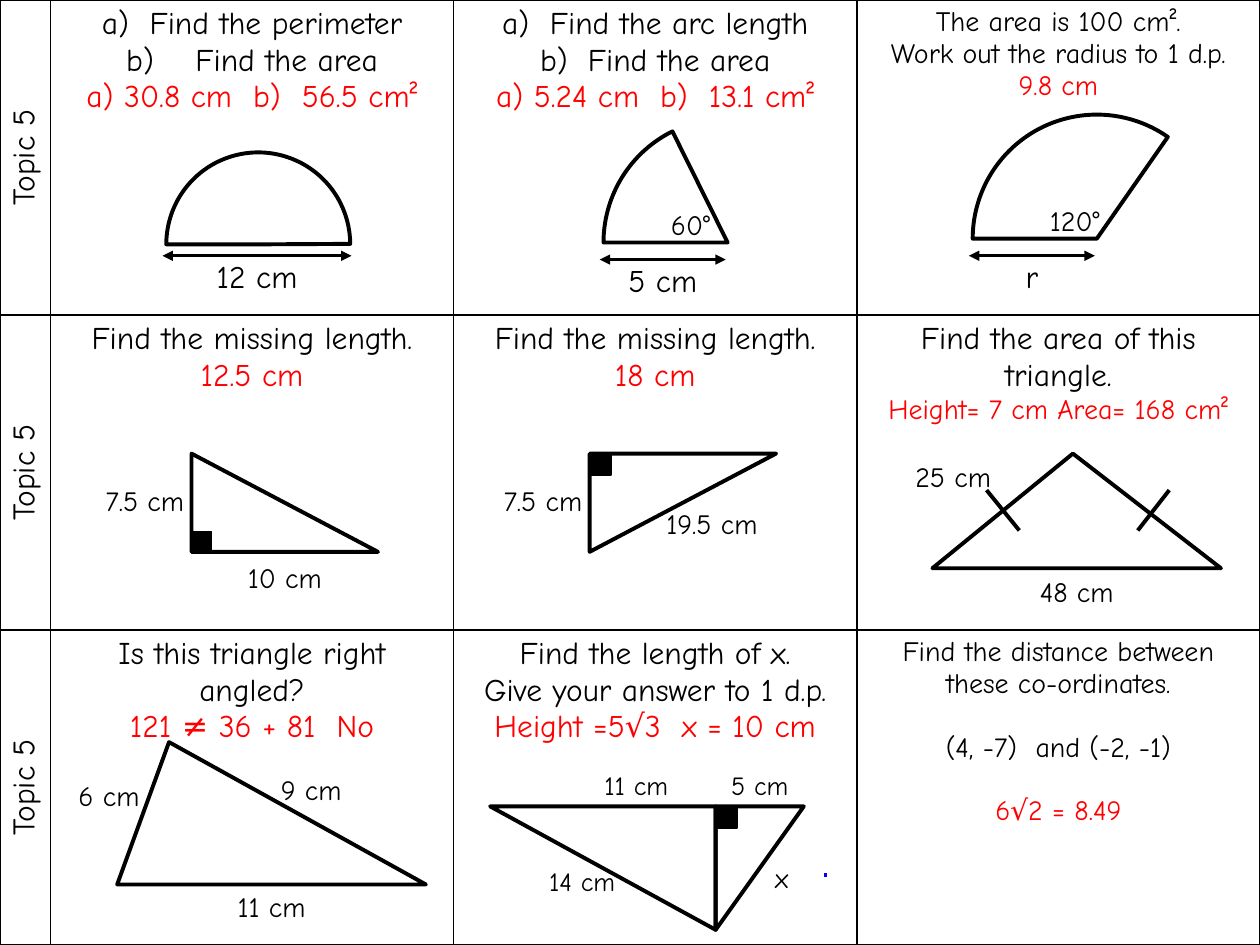
from lxml.etree import SubElement
from pptx import Presentation
from pptx.dml.color import RGBColor
from pptx.enum.shapes import MSO_CONNECTOR, MSO_SHAPE
from pptx.enum.text import MSO_ANCHOR, MSO_AUTO_SIZE, PP_ALIGN
from pptx.oxml.ns import qn
from pptx.util import Inches, Pt

BLACK = RGBColor(0x00, 0x00, 0x00)
WHITE = RGBColor(0xFF, 0xFF, 0xFF)
RED = RGBColor(0xFF, 0x00, 0x00)
BLUE = RGBColor(0x00, 0x00, 0xFF)
FONT = "Comic Neue"

TOPIC_WIDTH, QUESTION_WIDTH, ROW_HEIGHT = 0.4, 3.2, 2.5
LABEL_HEIGHTS = {15: 0.35, 16: 0.37, 18: 0.4}
HALF_TURN = 108  # 180 degrees in pie adjustment units

# Each question: its lines, its answer, question size, answer size
QUESTIONS = [
    [(["Find the perimeter", "Find the area"], "a) 30.8 cm  b)  56.5 cm²", 18, 18),
     (["Find the arc length", "Find the area"], "a) 5.24 cm  b)  13.1 cm²", 18, 18),
     (["The area is 100 cm².", "Work out the radius to 1 d.p."], "9.8 cm", 16, 16)],
    [(["Find the missing length."], "12.5 cm", 18, 18),
     (["Find the missing length."], "18 cm", 18, 18),
     (["Find the area of this triangle."], "Height= 7 cm Area= 168 cm²", 18, 16)],
    [(["Is this triangle right angled?"], "121 ≠ 36 + 81  No", 18, 18),
     (["Find the length of x.", "Give your answer to 1 d.p."],
      "Height =5√3  x = 10 cm", 18, 18),
     (["Find the distance between these co-ordinates.", "(4, -7)  and (-2, -1)"],
      "6√2 = 8.49", 16, 16)],
]
# Hanging indents of the lettered parts, by row and column
LETTERED = {(0, 0): [0.38, 0.55], (0, 1): [0.38, 0.38]}
SPACED = (2, 2)


def write(paragraph, text, size, color=BLACK):
    paragraph.alignment = PP_ALIGN.CENTER
    run = paragraph.add_run()
    run.text = text
    run.font.name, run.font.size = FONT, Pt(size)
    run.font.color.rgb = color


def add_letter(paragraph, indent):
    properties = paragraph._p.get_or_add_pPr()
    properties.set("marL", str(Inches(indent)))
    properties.set("indent", str(-Inches(indent)))
    SubElement(properties, qn("a:buFont"), typeface="+mj-lt")
    SubElement(properties, qn("a:buAutoNum"), type="alphaLcParenR")


def rule_cell(cell):
    properties = cell._tc.get_or_add_tcPr()
    for side in ("lnL", "lnR", "lnT", "lnB"):
        border = SubElement(properties, qn(f"a:{side}"), w=str(Pt(1)))
        fill = SubElement(border, qn("a:solidFill"))
        SubElement(fill, qn("a:srgbClr"), val=str(BLACK))
    cell.fill.background()


def fill_question(cell, question, indents, spaced):
    lines, answer, size, answer_size = question
    texts = [(line, size, BLACK) for line in lines] + [(answer, answer_size, RED)]
    for i, text in enumerate(texts):
        paragraphs = cell.text_frame
        paragraph = paragraphs.add_paragraph() if i else paragraphs.paragraphs[0]
        if i < len(indents):
            add_letter(paragraph, indents[i])
        if spaced and i:
            paragraph.space_before = Pt(18)
        write(paragraph, *text)


def question_grid(slide, left, top):
    width = TOPIC_WIDTH + 3 * QUESTION_WIDTH
    grid = slide.shapes.add_table(3, 4, Inches(left), Inches(top), Inches(width),
                                  Inches(3 * ROW_HEIGHT)).table
    grid.first_row = grid.horz_banding = False
    for c, column in enumerate(grid.columns):
        column.width = Inches(QUESTION_WIDTH if c else TOPIC_WIDTH)
    for r, questions in enumerate(QUESTIONS):
        grid.rows[r].height = Inches(ROW_HEIGHT)
        topic = grid.cell(r, 0)
        write(topic.text_frame.paragraphs[0], "Topic 5", 18)
        topic.vertical_anchor = MSO_ANCHOR.MIDDLE
        topic._tc.get_or_add_tcPr().set("vert", "vert270")
        rule_cell(topic)
        for c, question in enumerate(questions):
            cell = grid.cell(r, c + 1)
            fill_question(cell, question, LETTERED.get((r, c), []), (r, c) == SPACED)
            rule_cell(cell)


class Figure:
    """Grouped drawing, placed relative to its question cell."""

    def __init__(self, slide, row, column):
        self.shapes = slide.shapes.add_group_shape().shapes
        self.left = TOPIC_WIDTH + column * QUESTION_WIDTH
        self.top = row * ROW_HEIGHT

    def at(self, x, y):
        return Inches(self.left + x), Inches(self.top + y)

    def outline(self, kind, x, y, width, height, adjust=(), fill=None, flip="", weight=2.25):
        shape = self.shapes.add_shape(kind, *self.at(x, y), Inches(width), Inches(height))
        shape.shadow.inherit = False
        for i, value in enumerate(adjust):
            shape.adjustments[i] = value
        if fill is None:
            shape.fill.background()
        else:
            shape.fill.solid()
            shape.fill.fore_color.rgb = fill
        shape.line.color.rgb, shape.line.width = BLACK, Pt(weight)
        for axis in flip:
            shape._element.spPr.find(qn("a:xfrm")).set(f"flip{axis}", "1")

    def right_angle(self, x, y, width=0.16):
        self.outline(MSO_SHAPE.RECTANGLE, x, y, width, 0.16, fill=BLACK, weight=1)

    def label(self, text, x, y, width, size=16):
        box = self.shapes.add_textbox(*self.at(x, y), Inches(width),
                                      Inches(LABEL_HEIGHTS[size]))
        box.text_frame.word_wrap = True
        box.text_frame.auto_size = MSO_AUTO_SIZE.SHAPE_TO_FIT_TEXT
        write(box.text_frame.paragraphs[0], text, size)

    def stroke(self, start, end, weight=2.25, arrows=False):
        line = self.shapes.add_connector(MSO_CONNECTOR.STRAIGHT, *self.at(*start), *self.at(*end))
        line.line.color.rgb, line.line.width = BLACK, Pt(weight)
        if arrows:
            for tip in ("headEnd", "tailEnd"):
                SubElement(line.line._get_or_add_ln(), qn(f"a:{tip}"), type="triangle")
        SubElement(line._element.spPr, qn("a:effectLst"))


def sector(figure, x, y, size, end, measure, length, arrow_y, angle=None, angle_x=0):
    figure.outline(MSO_SHAPE.PIE, x, y, size, size, (HALF_TURN, end))
    start = x - 0.03
    figure.stroke((start, arrow_y), (start + length, arrow_y), 1.5, arrows=True)
    figure.label(measure, start, arrow_y - 0.04, length, 18)
    if angle:
        figure.label(angle, x + angle_x, y + 0.66, 1)


def right_triangle(figure, x, y, long_side, label_dx, label_dy, corner, flip=""):
    figure.outline(MSO_SHAPE.RIGHT_TRIANGLE, x, y, 1.48, 0.78, flip=flip)
    figure.label(long_side, x + label_dx, y + label_dy, 1.48)
    figure.label("7.5 cm", x - 1.29, y + 0.19, 1.84)
    figure.right_angle(x + corner[0], y + corner[1])


def isosceles_triangle(figure, x, y):
    figure.outline(MSO_SHAPE.ISOSCELES_TRIANGLE, x, y, 2.29, 0.91, (0.487,), WHITE)
    figure.label("48 cm", x, y + 0.91, 2.29)
    figure.label("25 cm", x - 0.36, y, 1.05)
    for top_dx, bottom_dx in ((0.43, 0.69), (1.88, 1.63)):  # equal-side ticks
        figure.stroke((x + top_dx, y + 0.29), (x + bottom_dx, y + 0.61))


def scalene_triangle(figure, x, y):
    figure.outline(MSO_SHAPE.ISOSCELES_TRIANGLE, x, y, 2.45, 1.13, (0.168,), WHITE)
    figure.label("11 cm", x, y + 1.12, 2.45)
    figure.label("6 cm", x - 0.5, y + 0.24, 0.87)
    figure.label("9 cm", x + 0.8, y + 0.19, 1.48)


def joined_triangles(figure, x, y):
    figure.outline(MSO_SHAPE.RIGHT_TRIANGLE, x + 1.79, y, 0.7, 0.98, flip="V")
    figure.right_angle(x + 1.78, y + 0.01, 0.18)
    figure.outline(MSO_SHAPE.RIGHT_TRIANGLE, x, y, 1.79, 0.98, flip="HV")
    figure.label("14 cm", x - 0.01, y + 0.42, 1.48, 15)
    figure.label("11 cm", x + 0.42, y - 0.34, 1.48, 15)
    figure.label("5 cm", x + 1.8, y - 0.34, 0.68, 15)
    figure.label("x", x + 1.97, y + 0.38, 0.69)


def pen_mark(slide, left, top):
    x, y = Inches(left), Inches(top)
    builder = slide.shapes.build_freeform(x, y + Inches(0.03))
    builder.add_line_segments([(x, y + Inches(0.01 * i)) for i in (2, 1, 0)], close=False)
    mark = builder.convert_to_shape()
    mark.shadow.inherit = False
    mark.fill.background()
    mark.line.color.rgb, mark.line.width = BLUE, Pt(1.5)


def main():
    presentation = Presentation()
    presentation.slide_width, presentation.slide_height = Inches(10), Inches(7.5)
    slide = presentation.slides.add_slide(presentation.slide_layouts[6])
    question_grid(slide, 0, 0)
    # Circle sectors
    sector(Figure(slide, 0, 0), 0.92, 1.21, 1.46, 215.82, "12 cm", 1.5, 2.03)
    sector(Figure(slide, 0, 1), 1.19, 0.94, 1.97, 146.15, "5 cm", 1, 2.06, "60°", 0.19)
    sector(Figure(slide, 0, 2), 0.92, 0.91, 1.97, 182.94, "r", 1, 2.03, "120°", 0.31)
    # Triangles
    right_triangle(Figure(slide, 1, 0), 1.12, 1.1, "10 cm", 0, 0.8, (0, 0.62))
    right_triangle(Figure(slide, 1, 1), 1.08, 1.1, "19.5 cm", 0.23, 0.37, (0.01, 0.01), "V")
    isosceles_triangle(Figure(slide, 1, 2), 0.6, 1.1)
    scalene_triangle(Figure(slide, 2, 0), 0.53, 0.89)
    joined_triangles(Figure(slide, 2, 1), 0.29, 1.4)
    pen_mark(slide, 6.55, 6.93)
    presentation.save("out.pptx")


if __name__ == "__main__":
    main()
